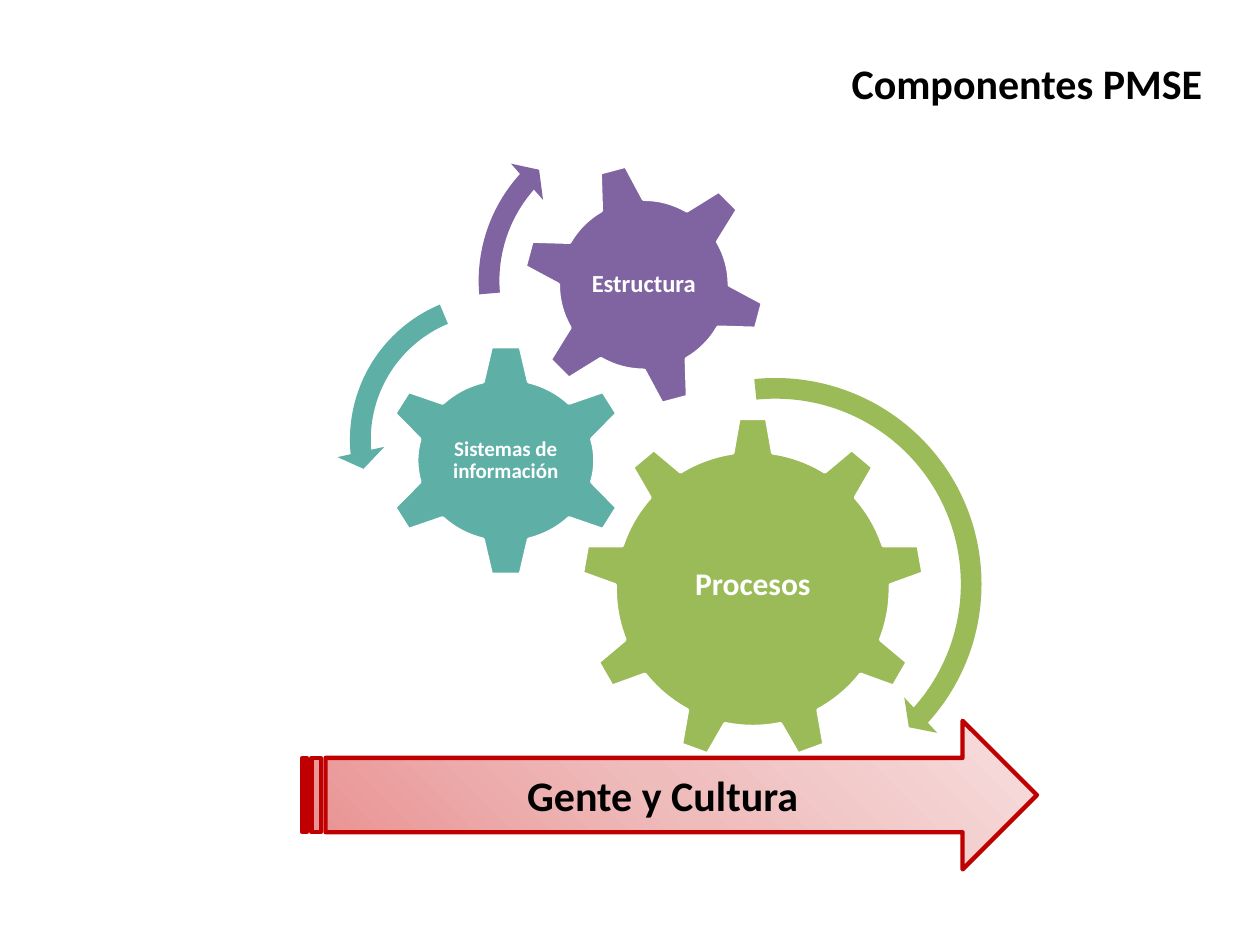
import copy

import pptx
import pptx.dml.color
import pptx.enum.shapes
import pptx.enum.text
import pptx.oxml.ns
import pptx.util

SHAPE = pptx.enum.shapes.MSO_SHAPE
ALIGN = pptx.enum.text.PP_ALIGN
ANCHOR = pptx.enum.text.MSO_ANCHOR

GREEN, TEAL, PURPLE = "9BBB59", "5EAFA6", "8064A2"
RED, WHITE, BLACK = "C00000", "FFFFFF", "000000"

# kind, box, rotation, colour, label, label size, label share of the gear, label lift
GEARS = [
    (SHAPE.GEAR_9, (4.61, 3.31, 2.73, 2.73), 0, GREEN, "Procesos", 18, (0.6, 0.51), 0.03),
    (SHAPE.GEAR_6, (3.03, 2.73, 1.97, 1.85), 0, TEAL, "Sistemas de información", 12, (0.51, 0.49), 0),
    (SHAPE.GEAR_6, (4.14, 1.29, 1.94, 1.94), -15, PURPLE, "Estructura", 14, (0.56, 0.56), 0),
]
# kind, box, colour, adjustments
TURNS = [
    (SHAPE.CIRCULAR_ARROW, (4.41, 2.89, 3.49, 3.49), GREEN, (0.047, 2.99, 25.238, 158.449, 0.055)),
    (SHAPE.LEFT_CIRCULAR_ARROW, (2.67, 2.22, 2.54, 2.54), TEAL, (0.065, 4.3, 104.891, 148.378, 0.075)),
    (SHAPE.CIRCULAR_ARROW, (3.69, 0.86, 2.74, 2.74), PURPLE, (0.06, 3.941, 133.138, 105.082, 0.07)),
]


def rgb(value):
    return pptx.dml.color.RGBColor.from_string(value)


def inches(box):
    return [pptx.util.Inches(v) for v in box]


def set_all(target, values):
    for name, value in values.items():
        setattr(target, name, value)


def add_shape(s, kind, box, fill=None, line=None, width=0):
    sp = s.shapes.add_shape(kind, *inches(box))
    sp.shadow.inherit = False
    if fill:
        sp.fill.solid()
        sp.fill.fore_color.rgb = rgb(fill)
    if line:
        sp.line.color.rgb = rgb(line)
        sp.line.width = pptx.util.Pt(width)
    else:
        sp.line.fill.background()
    return sp


def write(sp, text, size, color, align=ALIGN.CENTER, spacing=None, **frame):
    tf = sp.text_frame
    set_all(tf, {"word_wrap": True, **frame})
    p = tf.paragraphs[0]
    set_all(p, {"alignment": align, "line_spacing": spacing})
    r = p.add_run()
    r.text = text
    set_all(r.font, {"name": "Calibri", "size": pptx.util.Pt(size), "bold": True})
    r.font.color.rgb = rgb(color)


def gear(s, kind, box, rotation, color, label, size, share, lift):
    add_shape(s, kind, box, color, WHITE, 2).rotation = rotation
    x, y, w, h = box
    lw, lh = w * share[0], h * share[1]
    tb = s.shapes.add_textbox(*inches((x + (w - lw) / 2, y + (h - lh) / 2 - lift, lw, lh)))
    inset = pptx.util.Inches(0.02)
    write(tb, label, size, WHITE, spacing=0.9, vertical_anchor=ANCHOR.MIDDLE,
          margin_left=inset, margin_right=inset, margin_top=inset, margin_bottom=inset)


def turn_arrow(s, kind, box, color, adjustments):
    sp = add_shape(s, kind, box, color)
    for i, value in enumerate(adjustments):
        sp.adjustments[i] = value


def title(s, box):
    tb = s.shapes.add_textbox(*inches(box))
    write(tb, "Componentes PMSE", 24, BLACK, ALIGN.RIGHT,
          auto_size=pptx.enum.text.MSO_AUTO_SIZE.SHAPE_TO_FIT_TEXT)


def base_arrow(s, box):
    sp = add_shape(s, SHAPE.STRIPED_RIGHT_ARROW, box, line=RED, width=2.5)
    sp.fill.gradient()
    sp.fill.gradient_angle = 45
    stops = sp._element.spPr.find(".//" + pptx.oxml.ns.qn("a:gsLst"))
    stops.insert(1, copy.deepcopy(stops[0]))
    for stop, position, color in zip(sp.fill.gradient_stops, (0, 0.5, 1), ("E98F8F", "EFBCBC", "F7DEDE")):
        stop.position = position
        stop.color.rgb = rgb(color)
    write(sp, "Gente y Cultura", 24, BLACK, vertical_anchor=ANCHOR.MIDDLE)


def main():
    prs = pptx.Presentation()
    prs.slide_width, prs.slide_height = inches((10, 7.5))
    s = prs.slides.add_slide(prs.slide_layouts[6])
    for item in GEARS:
        gear(s, *item)
    for item in TURNS:
        turn_arrow(s, *item)
    title(s, (6.65, 0.41, 2.99, 0.5))
    base_arrow(s, (2.4, 5.72, 5.83, 1.18))
    prs.save("out.pptx")


if __name__ == "__main__":
    main()
